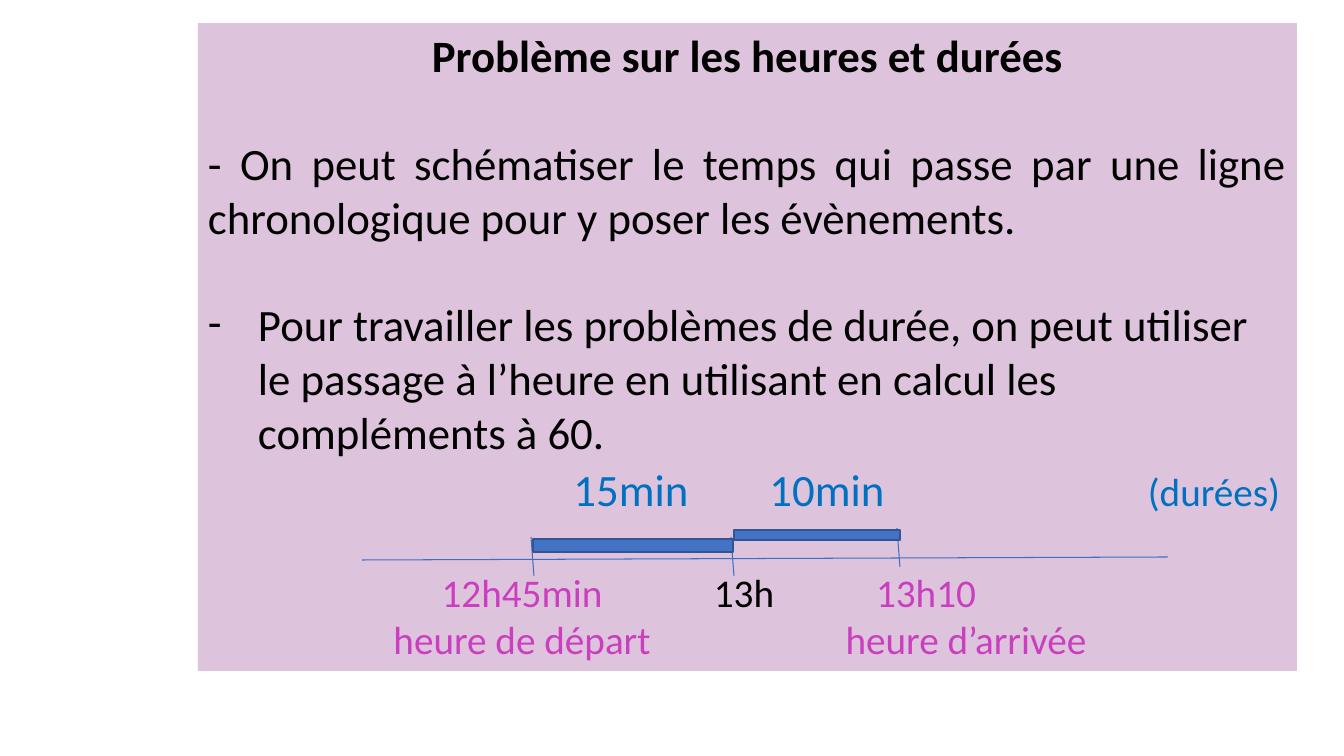
from pptx import Presentation
from pptx.dml.color import RGBColor
from pptx.enum.shapes import MSO_CONNECTOR, MSO_SHAPE
from pptx.enum.text import MSO_ANCHOR, MSO_AUTO_SIZE, PP_ALIGN
from pptx.oxml.ns import qn
from pptx.util import Pt
from lxml.etree import SubElement

EMU_PER_PX = 914400 / 100.8
FONT = "Calibri"
LILAC = RGBColor(0xDE, 0xC3, 0xDC)
BLACK = RGBColor(0x00, 0x00, 0x00)
DURATION_BLUE = RGBColor(0x00, 0x70, 0xC0)
TIME_PINK = RGBColor(0xC9, 0x3F, 0xBF)
LINE_BLUE = RGBColor(0x3F, 0x6F, 0xC3)
BAR_BLUE = RGBColor(0x44, 0x72, 0xC4)
BAR_EDGE = RGBColor(0x32, 0x54, 0x91)

PANEL = (198, 23, 1099, 648)
BULLET_INDENT = 50


def px(length):
    return round(length * EMU_PER_PX)


def place(shape, left, top, width, height):
    shape.left, shape.top = px(left), px(top)
    shape.width, shape.height = px(width), px(height)


def prepare_frame(frame, anchor):
    frame.word_wrap = True
    frame.auto_size = MSO_AUTO_SIZE.NONE
    frame.vertical_anchor = anchor
    frame.margin_left = frame.margin_right = px(10)
    frame.margin_top = frame.margin_bottom = px(5)


def format_paragraph(paragraph, size, color, align, bold=False):
    paragraph.alignment = align
    paragraph.space_before = paragraph.space_after = Pt(0)
    for run in paragraph.runs:
        run.font.name = FONT
        run.font.size = Pt(size)
        run.font.bold = bold
        run.font.color.rgb = color


def set_bullet(paragraph, character=None):
    properties = paragraph._p.get_or_add_pPr()
    indent = px(BULLET_INDENT) if character else 0
    properties.set("marL", str(indent))
    properties.set("indent", str(-indent))
    if character:
        SubElement(properties, qn("a:buFont"), typeface=FONT)
        SubElement(properties, qn("a:buChar"), char=character)
    else:
        SubElement(properties, qn("a:buNone"))


def add_rectangle(slide, left, top, width, height, fill, edge=None):
    shape = slide.shapes.add_shape(
        MSO_SHAPE.RECTANGLE, px(left), px(top), px(width), px(height))
    shape.shadow.inherit = False
    shape.fill.solid()
    shape.fill.fore_color.rgb = fill
    if edge is None:
        shape.line.fill.background()
    else:
        shape.line.color.rgb = edge
        shape.line.width = Pt(2)
    return shape


def add_line(slide, start_x, start_y, end_x, end_y):
    line = slide.shapes.add_connector(
        MSO_CONNECTOR.STRAIGHT, px(start_x), px(start_y), px(end_x), px(end_y))
    line.line.color.rgb = LINE_BLUE
    line.line.width = Pt(0.75)
    SubElement(line.element.spPr, qn("a:effectLst"))


def add_label(slide, text, center_x, center_y, size, color):
    width, height = 320, 60
    label = slide.shapes.add_textbox(0, 0, 0, 0)
    place(label, center_x - width / 2, center_y - height / 2, width, height)
    frame = label.text_frame
    frame.text = text
    prepare_frame(frame, MSO_ANCHOR.MIDDLE)
    format_paragraph(frame.paragraphs[0], size, color, PP_ALIGN.CENTER)


def build_lesson(slide, left, top, width, height):
    # Background panel, behind the placeholders
    panel = add_rectangle(slide, left, top, width, height, LILAC)
    panel.element.getparent().insert(2, panel.element)

    # Title
    title = slide.shapes.title
    place(title, left, top, width, 64)
    title.text_frame.text = "Problème sur les heures et durées"
    prepare_frame(title.text_frame, MSO_ANCHOR.TOP)
    format_paragraph(title.text_frame.paragraphs[0], 32, BLACK, PP_ALIGN.CENTER, True)

    # Explanations
    body = slide.placeholders[1]
    place(body, left, top + 108, width, 330)
    frame = body.text_frame
    prepare_frame(frame, MSO_ANCHOR.TOP)
    principle, method = frame.paragraphs[0], frame.add_paragraph()
    principle.text = ("- On peut schématiser le temps qui passe par une ligne "
                      "chronologique pour y poser les évènements.")
    method.text = ("Pour travailler les problèmes de durée, on peut utiliser\v"
                   "le passage à l’heure en utilisant en calcul les compléments à 60.")
    format_paragraph(principle, 32, BLACK, PP_ALIGN.JUSTIFY)
    format_paragraph(method, 32, BLACK, PP_ALIGN.LEFT)
    method.space_before = Pt(38)
    set_bullet(principle)
    set_bullet(method, "-")


def build_timeline(slide, left, top):
    # Axis and ticks
    add_line(slide, left + 164, top + 537, left + 970, top + 534)
    for x, y in ((333, 514), (533, 514), (699, 505)):
        add_line(slide, left + x, top + y, left + x + 3, top + y + 39)

    # Duration bars
    for x, y, width, height in ((335, 516, 200, 13), (536, 507, 166, 10)):
        add_rectangle(slide, left + x, top + y, width, height, BAR_BLUE, BAR_EDGE)

    # Durations, times and their meaning
    labels = (
        ("15min", 433, 466, 32, DURATION_BLUE),
        ("10min", 629, 466, 32, DURATION_BLUE),
        ("(durées)", 1016, 468, 28, DURATION_BLUE),
        ("12h45min", 324, 569, 28, TIME_PINK),
        ("13h", 546, 569, 28, BLACK),
        ("13h10", 728, 569, 28, TIME_PINK),
        ("heure de départ", 324, 616, 28, TIME_PINK),
        ("heure d’arrivée", 768, 616, 28, TIME_PINK),
    )
    for text, x, y, size, color in labels:
        add_label(slide, text, left + x, top + y, size, color)


def main():
    presentation = Presentation()
    presentation.slide_width, presentation.slide_height = px(1344), px(756)
    slide = presentation.slides.add_slide(presentation.slide_layouts[1])
    build_lesson(slide, *PANEL)
    build_timeline(slide, *PANEL[:2])
    presentation.save("out.pptx")


if __name__ == "__main__":
    main()
